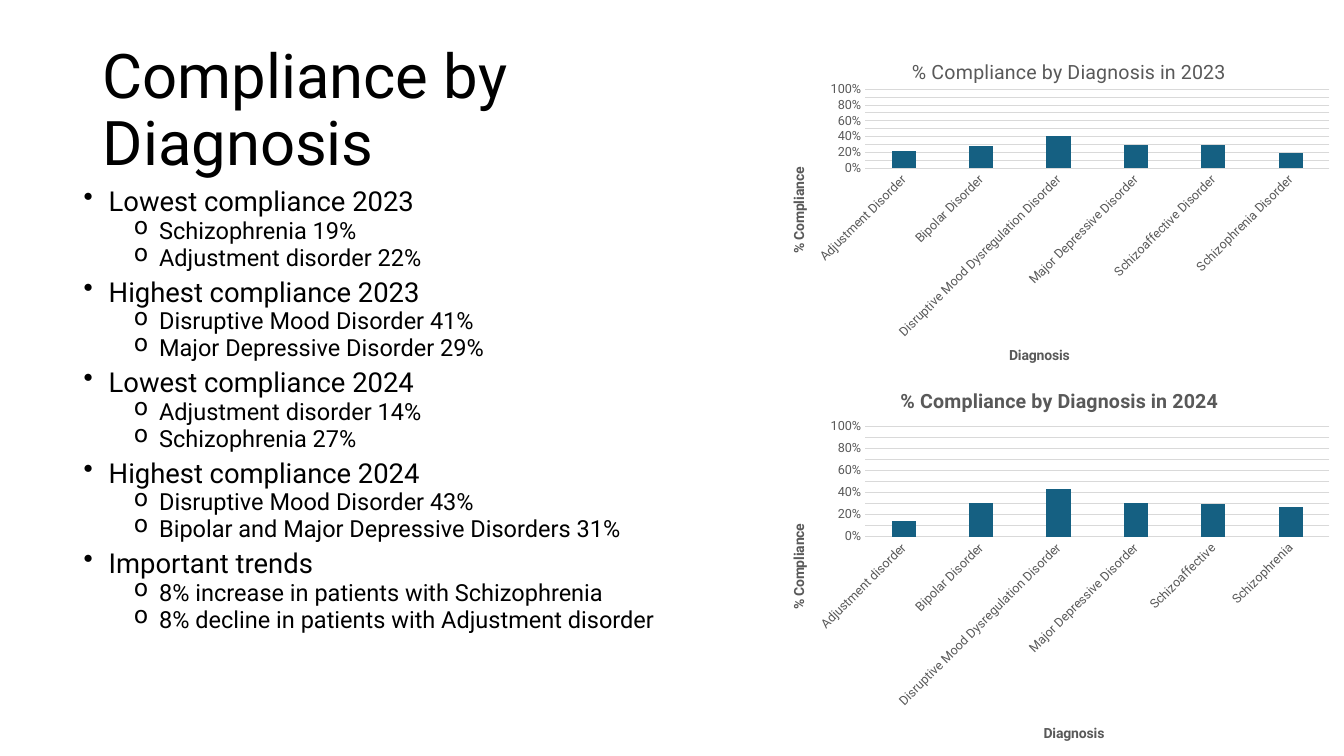
from lxml import etree
from pptx import Presentation
from pptx.chart.data import CategoryChartData
from pptx.dml.color import RGBColor
from pptx.enum.chart import XL_CHART_TYPE, XL_TICK_MARK
from pptx.enum.text import MSO_ANCHOR
from pptx.oxml import parse_xml
from pptx.oxml.ns import nsdecls, qn
from pptx.util import Inches, Pt

COLUMN = XL_CHART_TYPE.COLUMN_CLUSTERED
NO_TICK = XL_TICK_MARK.NONE
MIDDLE = MSO_ANCHOR.MIDDLE

BLACK = RGBColor(0x00, 0x00, 0x00)
GRAY = RGBColor(0x59, 0x59, 0x59)
LIGHT_GRAY = RGBColor(0xD9, 0xD9, 0xD9)
TEAL = RGBColor(0x15, 0x60, 0x82)
FONT = "Roboto"

FINDINGS = [
    ("Lowest compliance 2023",
     ["Schizophrenia 19%", "Adjustment disorder 22%"]),
    ("Highest compliance 2023",
     ["Disruptive Mood Disorder 41%", "Major Depressive Disorder 29%"]),
    ("Lowest compliance 2024",
     ["Adjustment disorder 14%", "Schizophrenia 27%"]),
    ("Highest compliance 2024",
     ["Disruptive Mood Disorder 43%",
      "Bipolar and Major Depressive Disorders 31%"]),
    ("Important trends",
     ["8% increase in patients with Schizophrenia",
      "8% decline in patients with Adjustment disorder"]),
]

COMPLIANCE_2023 = {
    "Adjustment Disorder": 0.22,
    "Bipolar Disorder": 0.28,
    "Disruptive Mood Dysregulation Disorder": 0.41,
    "Major Depressive Disorder": 0.29,
    "Schizoaffective Disorder": 0.3,
    "Schizophrenia Disorder": 0.19,
}
COMPLIANCE_2024 = {
    "Adjustment disorder": 0.14,
    "Bipolar Disorder": 0.31,
    "Disruptive Mood Dysregulation Disorder": 0.43,
    "Major Depressive Disorder": 0.31,
    "Schizoaffective": 0.3,
    "Schizophrenia": 0.27,
}


def style_font(font, size, color, bold=False):
    font.name = FONT
    font.size = Pt(size)
    font.bold = bold
    font.color.rgb = color


def add_text_frame(slide, box):
    frame = slide.shapes.add_textbox(*map(Inches, box)).text_frame
    frame.word_wrap = True
    return frame


def add_heading(slide, box, text):
    frame = add_text_frame(slide, box)
    frame.vertical_anchor = MIDDLE
    heading = frame.paragraphs[0]
    heading.text = text
    heading.line_spacing = 0.9
    style_font(heading.font, 44, BLACK)


def add_findings(slide, box, findings):
    frame = add_text_frame(slide, box)
    lines = []
    for topic, details in findings:
        lines.append((topic, 0))
        lines += [(detail, 1) for detail in details]
    for index, (text, level) in enumerate(lines):
        line = frame.add_paragraph() if index else frame.paragraphs[0]
        line.text = text
        line.level = level
        line.line_spacing = 0.7
        line.space_before = Pt(5 if level else 10)
        style_font(line.font, 16.8 if level else 19.6, BLACK)
        properties = line._p.get_or_add_pPr()
        properties.set("marL", str(Inches(0.75 if level else 0.25)))
        properties.set("indent", str(Inches(-0.25)))
        bullet = etree.Element(qn("a:buChar"), char="o" if level else "•")
        properties.find(qn("a:defRPr")).addprevious(bullet)


def set_layout(element, inner=False, **fractions):
    """Place a chart part at fractions (x, y, w, h) of the chart area."""
    for old in element.findall(qn("c:layout")):
        element.remove(old)
    target = '<c:layoutTarget val="inner"/>' if inner else ""
    modes = "".join(f'<c:{key}Mode val="edge"/>' for key in "xy")
    values = "".join(f'<c:{key} val="{value}"/>'
                     for key, value in fractions.items())
    layout = parse_xml(
        f'<c:layout {nsdecls("c")}><c:manualLayout>{target}{modes}{values}'
        '</c:manualLayout></c:layout>')
    text = element.find(qn("c:tx"))
    if text is None:
        element.insert(0, layout)
    else:
        text.addnext(layout)


def add_chart_title(owner, text, size, bold, position):
    """Title a chart or an axis."""
    title = owner.chart_title if hasattr(owner, "chart_title") else owner.axis_title
    paragraph = title.text_frame.paragraphs[0]
    paragraph.text = text
    style_font(paragraph.font, size, GRAY, bold)
    x, y = position
    set_layout(title._element, x=x, y=y)
    return title


def add_compliance_chart(slide, box, year, rates, bold_title, plot, positions):
    data = CategoryChartData(number_format="0%")
    data.categories = list(rates)
    data.add_series("Series 1", list(rates.values()))
    chart = slide.shapes.add_chart(COLUMN, *map(Inches, box), data).chart
    style_font(chart.font, 10, BLACK)
    chart.has_legend = False

    title_at, diagnosis_at, compliance_at = positions
    add_chart_title(chart, f"% Compliance by Diagnosis in {year}", 14,
                    bold_title, title_at)
    diagnoses, percents = chart.category_axis, chart.value_axis
    add_chart_title(diagnoses, "Diagnosis", 10, True, diagnosis_at)
    compliance = add_chart_title(percents, "% Compliance", 10, True,
                                 compliance_at)
    compliance.text_frame._txBody.find(qn("a:bodyPr")).set("rot", "-5400000")

    for axis in (diagnoses, percents):
        axis.major_tick_mark = axis.minor_tick_mark = NO_TICK
        style_font(axis.tick_labels.font, 9, GRAY)
    label_body = diagnoses._element.find(qn("c:txPr")).find(qn("a:bodyPr"))
    label_body.set("rot", "-2700000")
    diagnoses.format.line.color.rgb = LIGHT_GRAY
    diagnoses.format.line.width = Pt(0.75)

    percents.minimum_scale, percents.maximum_scale = 0, 1
    percents.major_unit = 0.1
    percents.tick_labels.number_format = "0%"
    percents.tick_labels.number_format_is_linked = False
    percents.format.line.fill.background()
    grid = percents.major_gridlines.format.line
    grid.color.rgb = LIGHT_GRAY
    grid.width = Pt(0.75)

    columns = chart.plots[0]
    columns.gap_width, columns.overlap = 219, -27
    columns.vary_by_categories = False
    fill = columns.series[0].format.fill
    fill.solid()
    fill.fore_color.rgb = TEAL
    top, height = plot
    set_layout(chart._chartSpace.chart.plotArea, inner=True,
               x=0.175, y=top, w=0.805, h=height)


def main():
    deck = Presentation()
    deck.slide_width, deck.slide_height = Inches(13.33), Inches(7.5)
    slide = deck.slides.add_slide(deck.slide_layouts[6])
    add_heading(slide, (0.92, 0.37, 6.66, 1.48), "Compliance by Diagnosis")
    add_findings(slide, (0.73, 1.87, 6.85, 4.76), FINDINGS)
    add_compliance_chart(
        slide, (7.58, 0.34, 5.72, 3.41), 2023, COMPLIANCE_2023, False,
        (0.16, 0.23), [(0.25, 0.06), (0.42, 0.9), (0.04, 0.38)])
    add_compliance_chart(
        slide, (7.58, 3.61, 5.72, 3.9), 2024, COMPLIANCE_2024, True,
        (0.16, 0.28), [(0.23, 0.05), (0.48, 0.91), (0.04, 0.4)])
    deck.save("out.pptx")


if __name__ == "__main__":
    main()
